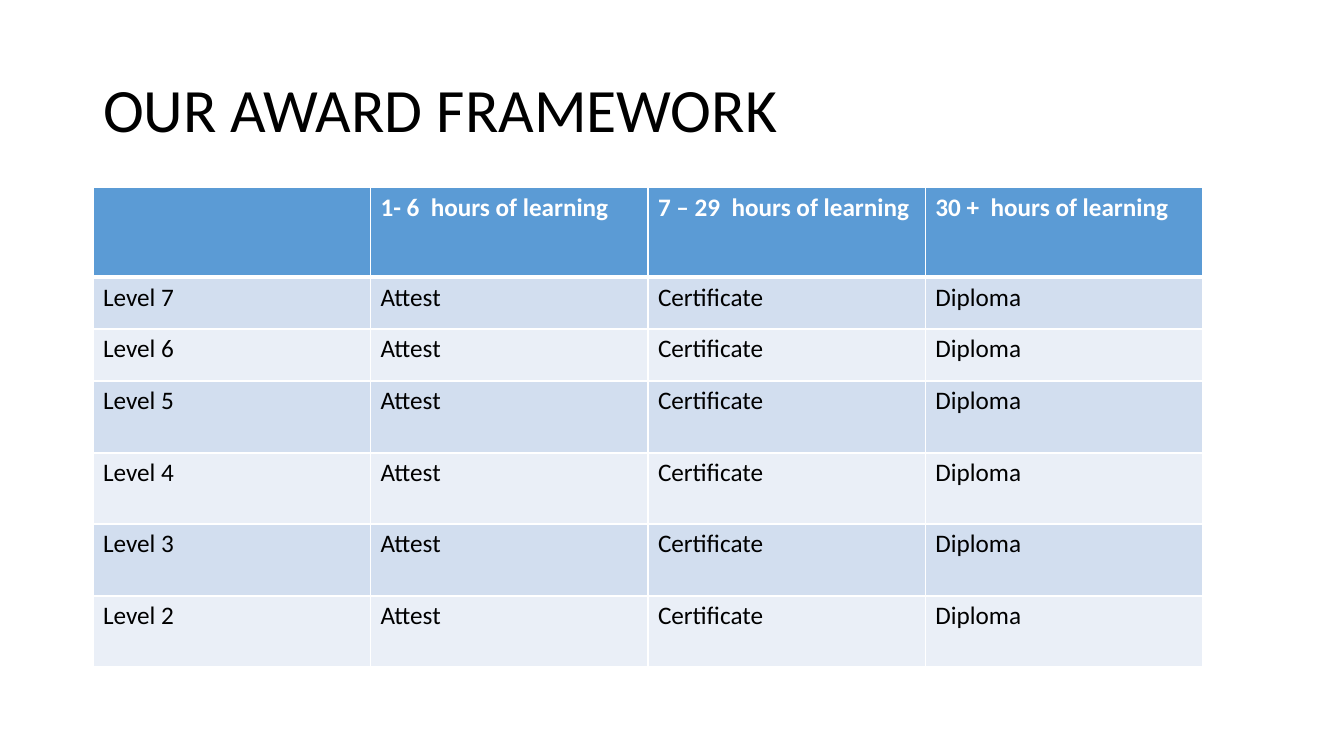
from lxml import etree
from pptx import Presentation
from pptx.dml.color import RGBColor
from pptx.enum.text import MSO_ANCHOR, PP_ALIGN
from pptx.oxml.ns import qn
from pptx.util import Emu, Pt

LEFT, TOP, MIDDLE = PP_ALIGN.LEFT, MSO_ANCHOR.TOP, MSO_ANCHOR.MIDDLE

# Content
TITLE = "OUR AWARD FRAMEWORK"
HEADER = ["", "1- 6  hours of learning", "7 – 29  hours of learning",
          "30 +  hours of learning"]
AWARDS = ["Attest", "Certificate", "Diploma"]
LEVELS = [7, 6, 5, 4, 3, 2]

# Layout in px
SLIDE_W, SLIDE_H = 1344, 756
TITLE_BOX = (93, 40, 1159, 146)
TABLE_X, TABLE_Y = 93, 187
COL_W = 277.5
ROW_H = [90, 52, 52, 72, 71, 72, 71]

# Style
FONT = "Calibri"
BLACK, WHITE = "000000", "FFFFFF"
HEADER_FILL, BANDS = "5B9BD5", ["D2DEEF", "EAEFF7"]


def px(value):
    return Emu(round(value * 914400 / 100.8))


def color(value):
    return RGBColor.from_string(value)


def write(tf, text, size=18, ink=BLACK, bold=False, anchor=TOP, spacing=1.0):
    tf.vertical_anchor = anchor
    p = tf.paragraphs[0]
    p.alignment = LEFT
    p.line_spacing = spacing
    if not text:
        return
    r = p.add_run()
    r.text = text
    r.font.name, r.font.size, r.font.bold = FONT, Pt(size), bold
    r.font.color.rgb = color(ink)


def add_borders(cell, ink, widths):
    tc_pr = cell._tc.get_or_add_tcPr()
    for side, width in widths.items():
        ln = etree.SubElement(tc_pr, qn(f"a:ln{side}"), w=str(Pt(width)))
        fill = etree.SubElement(ln, qn("a:solidFill"))
        etree.SubElement(fill, qn("a:srgbClr"), val=ink)


prs = Presentation()
prs.slide_width, prs.slide_height = px(SLIDE_W), px(SLIDE_H)
s = prs.slides.add_slide(prs.slide_layouts[5])

# Title
title = s.shapes.title
title.left, title.top, title.width, title.height = map(px, TITLE_BOX)
write(title.text_frame, TITLE, size=44, anchor=MIDDLE, spacing=0.9)

# Award table
rows = [HEADER] + [[f"Level {level}"] + AWARDS for level in LEVELS]
table = s.shapes.add_table(len(rows), len(HEADER), px(TABLE_X), px(TABLE_Y),
                           px(COL_W * len(HEADER)), px(sum(ROW_H))).table
for col in table.columns:
    col.width = px(COL_W)
for i, (texts, height) in enumerate(zip(rows, ROW_H)):
    table.rows[i].height = px(height)
    is_header = i == 0
    fill = HEADER_FILL if is_header else BANDS[(i - 1) % 2]
    widths = {"L": 1, "R": 1, "T": 3 if i == 1 else 1, "B": 3 if is_header else 1}
    for j, text in enumerate(texts):
        cell = table.cell(i, j)
        write(cell.text_frame, text, ink=WHITE if is_header else BLACK, bold=is_header)
        add_borders(cell, WHITE, widths)
        cell.fill.solid()
        cell.fill.fore_color.rgb = color(fill)

prs.save("out.pptx")
